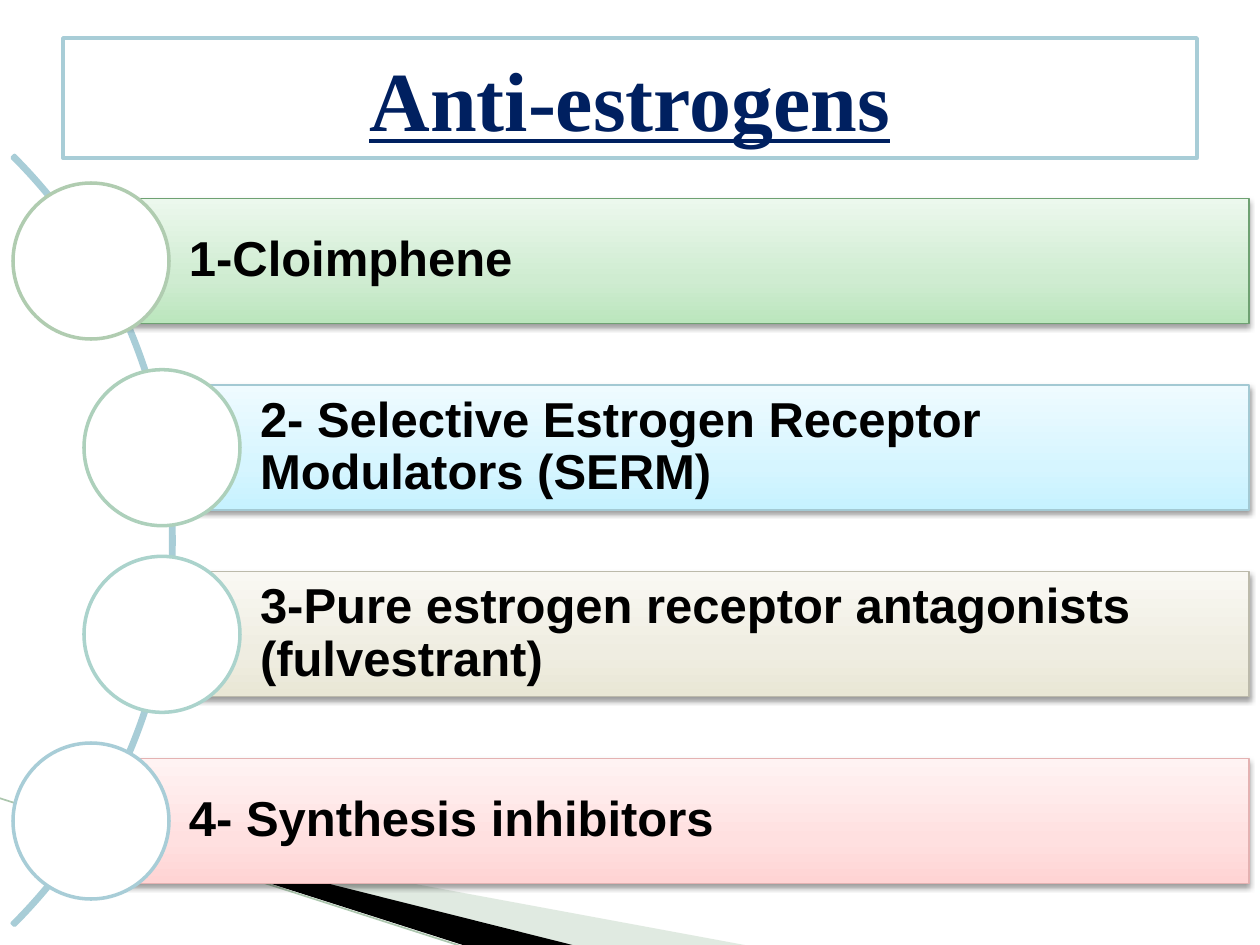
import copy

import pptx
import pptx.dml.color
import pptx.enum.shapes
import pptx.enum.text
import pptx.oxml
import pptx.oxml.ns
import pptx.util
from lxml import etree

RGB = pptx.dml.color.RGBColor
SHAPE = pptx.enum.shapes.MSO_SHAPE
qn = pptx.oxml.ns.qn

PX = 914400 / 126
WHITE = RGB(0xFF, 0xFF, 0xFF)
BLACK = RGB(0, 0, 0)
NAVY = RGB(0x00, 0x20, 0x60)
PALE_BLUE = RGB(0xA8, 0xCD, 0xD7)
SAGE = RGB(0xB3, 0xCB, 0xB5)
SAGE_LINE = RGB(0xAC, 0xC6, 0xAE)

BAR_RIGHT, BAR_HEIGHT, CIRCLE_SIZE = 1249, 125, 156
FIRST_ROW_MIDDLE, LAST_ROW_MIDDLE = 261, 821
OUTER_X, INNER_X = 91, 162
GRADIENT_POSITIONS = (0, 0.35, 1)

# text, circle centre, gradient from bottom to top, bar line, circle line
DRUG_CLASSES = [
    ("1-Cloimphene", OUTER_X,
     (RGB(0xBB, 0xE6, 0xBD), RGB(0xCF, 0xEC, 0xD1), RGB(0xEC, 0xF8, 0xED)),
     RGB(0x6E, 0xA1, 0x72), RGB(0xB0, 0xCC, 0xB0)),
    ("2- Selective Estrogen Receptor Modulators (SERM)", INNER_X,
     (RGB(0xC6, 0xF2, 0xFF), RGB(0xD6, 0xF5, 0xFF), RGB(0xEF, 0xFB, 0xFF)),
     RGB(0xA3, 0xC9, 0xD3), RGB(0xAD, 0xD0, 0xBB)),
    ("3-Pure estrogen receptor antagonists (fulvestrant)", INNER_X,
     (RGB(0xE9, 0xE7, 0xD5), RGB(0xEF, 0xED, 0xE1), RGB(0xF9, 0xF8, 0xF3)),
     RGB(0xBC, 0xBA, 0xAB), RGB(0xAB, 0xD3, 0xCC)),
    ("4- Synthesis inhibitors", OUTER_X,
     (RGB(0xFF, 0xD4, 0xD4), RGB(0xFF, 0xE0, 0xE0), RGB(0xFF, 0xF3, 0xF3)),
     RGB(0xE4, 0xB2, 0xB2), PALE_BLUE),
]


def px(length):
    return pptx.util.Emu(round(length * PX))


def set_line(shape, color, width):
    shape.line.color.rgb = color
    shape.line.width = pptx.util.Pt(width)


def set_fill(shape, color):
    shape.fill.solid()
    shape.fill.fore_color.rgb = color


def add_text(paragraph, text, font_name, size, color):
    run = paragraph.add_run()
    run.text = text
    run.font.name = font_name
    run.font.size = pptx.util.Pt(size)
    run.font.bold = True
    run.font.color.rgb = color
    return run


def add_outline(slide, kind, left, top, width, height, line_color, line_width):
    shape = slide.shapes.add_shape(kind, px(left), px(top), px(width), px(height))
    set_line(shape, line_color, line_width)
    shape.shadow.inherit = False
    return shape


def add_swoosh(slide, points, color, opacity=None):
    builder = slide.shapes.build_freeform(*points[0], scale=PX)
    builder.add_line_segments(points[1:], close=True)
    swoosh = builder.convert_to_shape()
    set_fill(swoosh, color)
    swoosh.line.fill.background()
    swoosh.shadow.inherit = False
    if opacity is not None:
        rgb = swoosh._element.spPr.find(".//" + qn("a:srgbClr"))
        etree.SubElement(rgb, qn("a:alpha"), val=str(opacity * 1000))


def add_swoosh_edge(slide):
    edge = slide.shapes.add_connector(
        pptx.enum.shapes.MSO_CONNECTOR.STRAIGHT, px(-1), px(798), px(467), px(948))
    set_line(edge, SAGE_LINE, 0.95)
    etree.SubElement(edge._element.spPr, qn("a:effectLst"))


def set_gradient(shape, colors):
    shape.fill.gradient()
    shape.fill.gradient_angle = 90
    stop_list = shape._element.spPr.find(".//" + qn("a:gsLst"))
    stop_list.append(copy.deepcopy(stop_list[0]))
    for stop, position, color in zip(shape.fill.gradient_stops, GRADIENT_POSITIONS, colors):
        stop.position = position
        stop.color.rgb = color


def add_drop_shadow(shape):
    effects = shape._element.spPr.find(qn("a:effectLst"))
    shadow = etree.SubElement(
        effects, qn("a:outerShdw"), blurRad=str(pptx.util.Pt(3.1)),
        dist=str(pptx.util.Pt(1.6)), dir="5400000", rotWithShape="0")
    color = etree.SubElement(shadow, qn("a:srgbClr"), val=str(BLACK))
    etree.SubElement(color, qn("a:alpha"), val="38000")


def add_bar(slide, text, left, middle, colors, line_color):
    bar = add_outline(slide, SHAPE.RECTANGLE, left, middle - BAR_HEIGHT / 2,
                      BAR_RIGHT - left, BAR_HEIGHT, line_color, 0.75)
    set_gradient(bar, colors)
    add_drop_shadow(bar)
    frame = bar.text_frame
    frame.word_wrap = True
    frame.vertical_anchor = pptx.enum.text.MSO_ANCHOR.MIDDLE
    frame.margin_left = px(98)
    frame.margin_top = frame.margin_right = frame.margin_bottom = px(10)
    paragraph = frame.paragraphs[0]
    paragraph.alignment = pptx.enum.text.PP_ALIGN.LEFT
    paragraph.line_spacing = 0.9
    add_text(paragraph, text, "Arial", 28, BLACK)


def add_circle(slide, center, middle, line_color):
    circle = add_outline(slide, SHAPE.OVAL, center - CIRCLE_SIZE / 2,
                         middle - CIRCLE_SIZE / 2, CIRCLE_SIZE, CIRCLE_SIZE, line_color, 2)
    set_fill(circle, WHITE)


def add_arc(slide):
    arc = add_outline(slide, SHAPE.BLOCK_ARC, -915, -4, 1089, 1089, PALE_BLUE, 2)
    arc.fill.background()
    for index, value in enumerate((189, 27, 0.003)):
        arc.adjustments[index] = value


def format_title(title):
    title.left, title.top, title.width, title.height = px(63), px(38), px(1134), px(120)
    set_fill(title, WHITE)
    set_line(title, PALE_BLUE, 2)
    title.text_frame.vertical_anchor = pptx.enum.text.MSO_ANCHOR.MIDDLE
    paragraph = title.text_frame.paragraphs[0]
    paragraph.alignment = pptx.enum.text.PP_ALIGN.CENTER
    add_text(paragraph, "Anti-estrogens", "Times New Roman", 48, NAVY).font.underline = True


def main():
    deck = pptx.Presentation()
    deck.slide_width, deck.slide_height = px(1260), px(945)
    slide = deck.slides.add_slide(deck.slide_layouts[5])
    format_title(slide.shapes.title)

    add_swoosh(slide, [(69, 820), (750, 946), (575, 946), (69, 819)], SAGE, opacity=40)
    add_swoosh(slide, [(67, 818), (576, 946), (469, 947), (68, 819)], BLACK)
    add_swoosh_edge(slide)

    add_arc(slide)
    pitch = (LAST_ROW_MIDDLE - FIRST_ROW_MIDDLE) / (len(DRUG_CLASSES) - 1)
    for row, (text, center, colors, bar_line, circle_line) in enumerate(DRUG_CLASSES):
        middle = FIRST_ROW_MIDDLE + row * pitch
        add_bar(slide, text, center, middle, colors, bar_line)
        add_circle(slide, center, middle, circle_line)

    deck.save("out.pptx")


if __name__ == "__main__":
    main()
